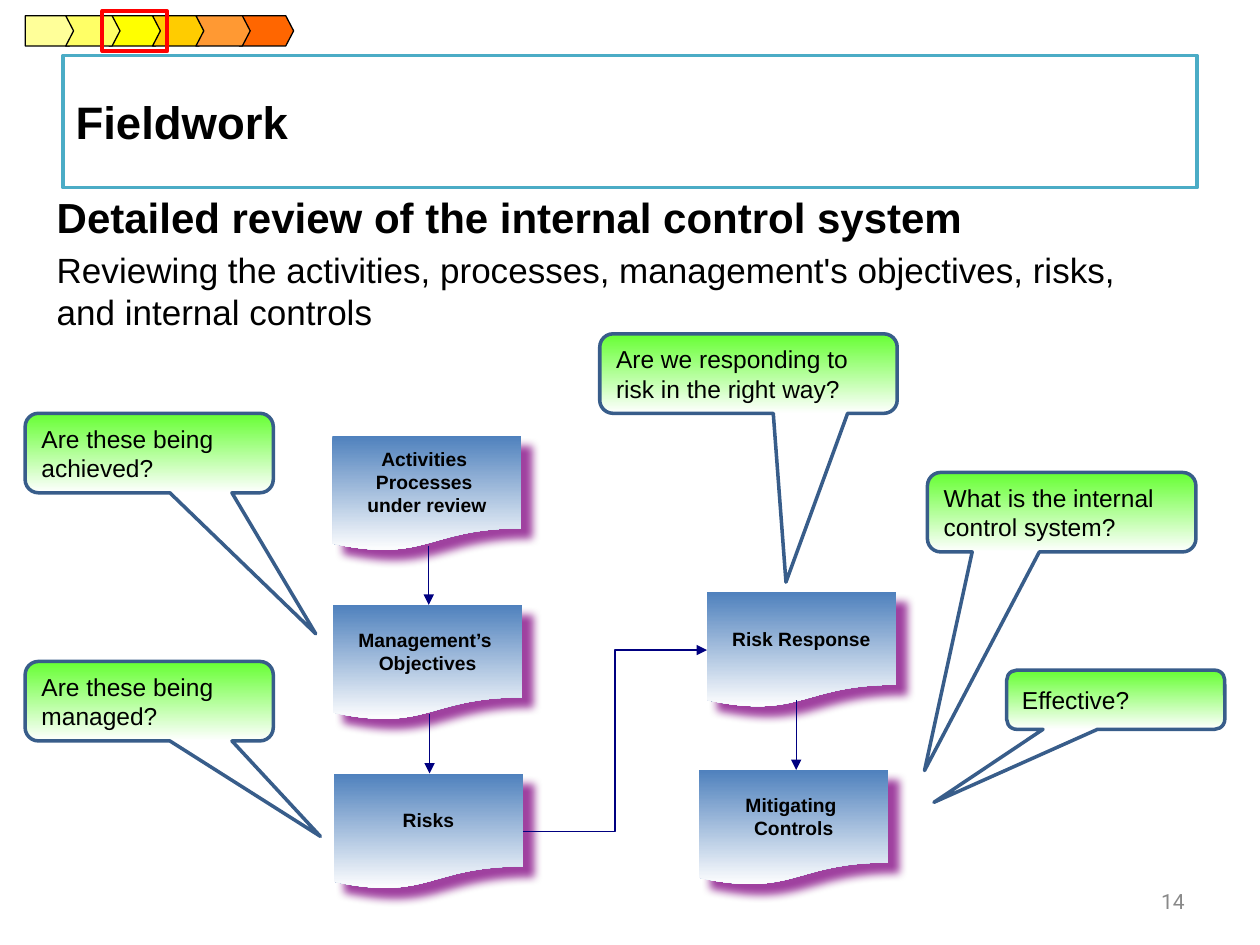
from dataclasses import dataclass

import pptx
import pptx.dml.color
import pptx.enum.shapes
import pptx.enum.text
import pptx.oxml
import pptx.oxml.ns
import pptx.util
from pptx.util import Pt

SHAPE = pptx.enum.shapes.MSO_SHAPE
CONNECTOR = pptx.enum.shapes.MSO_CONNECTOR
ALIGN = pptx.enum.text.PP_ALIGN
ANCHOR = pptx.enum.text.MSO_ANCHOR
NO_AUTOFIT = pptx.enum.text.MSO_AUTO_SIZE.NONE


@dataclass(frozen=True)
class Theme:
    font: str = "Arial"
    number_font: str = "Roboto"
    text: str = "000000"
    number: str = "898989"
    white: str = "FFFFFF"
    title_line: str = "4BACC6"
    document: str = "4F81BD"
    document_shadow: str = "800080"
    callout: str = "66FF33"
    callout_line: str = "385D8A"
    arrow: str = "000080"
    marker: str = "FF0000"
    title_size: float = 26
    heading_size: float = 24
    body_size: float = 20
    callout_size: float = 14
    number_size: float = 12
    document_size: float = 11


THEME = Theme()

# Strip steps from back to front: position, colour
STEPS = [(0, "FFFF99"), (2, "FFFF00"), (3, "FFCC00"),
         (5, "FF6600"), (4, "FF9933"), (1, "FFFF66")]

# Documents: text, left, top
LEFT_COLUMN = ["Activities \vProcesses \vunder review",
               "Management’s \vObjectives", "Risks"]
RIGHT_COLUMN = [("Risk Response", 404, 338.4), ("Mitigating \vControls", 399.6, 440)]

# Arrows: kind, start, end
ARROWS = [
    (CONNECTOR.STRAIGHT, (245, 311.8), (245, 345.6)),
    (CONNECTOR.STRAIGHT, (245.5, 408.2), (245.5, 442)),
    (CONNECTOR.ELBOW, (298.8, 475.2), (404, 371.5)),
    (CONNECTOR.STRAIGHT, (455, 400.3), (455, 440)),
]

# Callouts: text, box, pointer position relative to the box
CALLOUTS = [
    ("What is the internal control system?", (530, 270, 153.4, 45.4), (-0.511, 3.252)),
    ("Effective?", (575.3, 383, 124.6, 33.8), (-0.834, 1.735)),
    ("Are these being managed?", (14.4, 378, 141.8, 45.4), (0.69, 1.701)),
    ("Are these being achieved?", (14.4, 236.2, 141.8, 45.4), (0.671, 2.274)),
    ("Are we responding to risk in the right way?", (342.7, 190.8, 170, 45.4), (0.126, 2.624)),
]


def rgb(value):
    return pptx.dml.color.RGBColor.from_string(value)


def set_attributes(target, values):
    for name, value in values.items():
        setattr(target, name, value)


def write(paragraph, text, size, bold=False, color=THEME.text, font=THEME.font, **layout):
    paragraph.text = text
    set_attributes(paragraph, layout)
    for run in paragraph.runs:
        set_attributes(run.font, {"name": font, "size": Pt(size), "bold": bold})
        run.font.color.rgb = rgb(color)


def set_line(line, color, width):
    line.color.rgb = rgb(color)
    line.width = Pt(width)


def place(shape, left, top, width, height):
    set_attributes(shape, {"left": Pt(left), "top": Pt(top),
                           "width": Pt(width), "height": Pt(height)})


def add_shape(slide, kind, box, adjustments=()):
    shape = slide.shapes.add_shape(kind, *map(Pt, box))
    shape.shadow.inherit = False
    for index, value in enumerate(adjustments):
        shape.adjustments[index] = value
    return shape


def fill_downward(shape, color):
    """Fade from the colour at the top to white at the bottom."""
    shape.fill.gradient()
    shape.fill.gradient_angle = 270
    for stop, stop_color in zip(shape.fill.gradient_stops, (color, THEME.white)):
        stop.color.rgb = rgb(stop_color)


def add_title(slide, text):
    title = slide.shapes.title
    place(title, 36, 31.7, 648, 75.6)
    title.fill.solid()
    title.fill.fore_color.rgb = rgb(THEME.white)
    set_line(title.line, THEME.title_line, 2)
    set_attributes(title.text_frame, {"auto_size": NO_AUTOFIT, "vertical_anchor": ANCHOR.MIDDLE})
    write(title.text_frame.paragraphs[0], text, THEME.title_size, True, alignment=ALIGN.LEFT)


def add_body(slide, heading, detail):
    body = slide.placeholders[1]
    place(body, 25.2, 105.8, 646.6, 102.2)
    frame = body.text_frame
    frame.auto_size = NO_AUTOFIT
    write(frame.paragraphs[0], heading, THEME.heading_size, True)
    write(frame.add_paragraph(), detail, THEME.body_size)
    for paragraph in frame.paragraphs:
        properties = paragraph._p.get_or_add_pPr()
        properties.set("marL", "0")
        properties.set("indent", "0")
        properties.append(pptx.oxml.parse_xml(
            f'<a:buNone {pptx.oxml.ns.nsdecls("a")}/>'))


def add_page_number(slide, text):
    box = slide.shapes.add_textbox(Pt(516), Pt(500.4), Pt(168), Pt(28.8))
    set_attributes(box.text_frame, {"word_wrap": True, "vertical_anchor": ANCHOR.MIDDLE})
    write(box.text_frame.paragraphs[0], text, THEME.number_size, color=THEME.number,
          font=THEME.number_font, alignment=ALIGN.RIGHT)


def add_document(slide, text, left, top):
    shape = add_shape(slide, SHAPE.FLOWCHART_DOCUMENT, (left, top, 108, 66))
    fill_downward(shape, THEME.document)
    shape.line.fill.background()
    effects = shape._element.spPr.find(pptx.oxml.ns.qn("a:effectLst"))
    effects.append(pptx.oxml.parse_xml(
        f'<a:outerShdw {pptx.oxml.ns.nsdecls("a")} blurRad="{Pt(5)}" dist="{Pt(8.5)}" '
        f'dir="2700000" algn="tl" rotWithShape="0"><a:srgbClr val="{THEME.document_shadow}">'
        '<a:alpha val="75000"/></a:srgbClr></a:outerShdw>'))
    set_attributes(shape.text_frame, {"word_wrap": False, "vertical_anchor": ANCHOR.MIDDLE})
    write(shape.text_frame.paragraphs[0], text, THEME.document_size, True,
          alignment=ALIGN.CENTER)


def add_arrow(slide, kind, start, end):
    arrow = slide.shapes.add_connector(kind, *map(Pt, start + end))
    set_line(arrow.line, THEME.arrow, 0.75)
    namespace = pptx.oxml.ns.nsdecls("a")
    arrow.line._get_or_add_ln().append(
        pptx.oxml.parse_xml(f'<a:tailEnd {namespace} type="triangle"/>'))
    arrow._element.spPr.append(pptx.oxml.parse_xml(f'<a:effectLst {namespace}/>'))


def add_callout(slide, text, box, pointer):
    shape = add_shape(slide, SHAPE.ROUNDED_RECTANGULAR_CALLOUT, box, (*pointer, 0.167))
    fill_downward(shape, THEME.callout)
    set_line(shape.line, THEME.callout_line, 2)
    set_attributes(shape.text_frame, {"word_wrap": True, "vertical_anchor": ANCHOR.MIDDLE})
    write(shape.text_frame.paragraphs[0], text, THEME.callout_size,
          alignment=ALIGN.LEFT, space_before=Pt(7))


def add_step_strip(slide):
    for position, color in STEPS:
        if position == 0:
            step = add_shape(slide, SHAPE.PENTAGON, (14.4, 9, 29.5, 17.3), (0.25,))
        else:
            left = 37.6 + 24.8 * (position - 1)
            step = add_shape(slide, SHAPE.CHEVRON, (left, 9, 31, 17.3), (0.26,))
        step.fill.solid()
        step.fill.fore_color.rgb = rgb(color)
        set_line(step.line, THEME.text, 0.75)
    marker = add_shape(slide, SHAPE.RECTANGLE, (58.5, 6.3, 37, 23))
    marker.fill.background()
    set_line(marker.line, THEME.marker, 2.25)


def main():
    presentation = pptx.Presentation()
    set_attributes(presentation, {"slide_width": Pt(720), "slide_height": Pt(540)})
    slide = presentation.slides.add_slide(presentation.slide_layouts[1])

    # Heading texts
    add_title(slide, "Fieldwork")
    add_body(slide, "Detailed review of the internal control system",
             "Reviewing the activities, processes, management's objectives, risks, "
             "and internal controls")
    add_page_number(slide, "14")

    # Flow of documents
    for row, text in enumerate(LEFT_COLUMN):
        add_document(slide, text, 190 + 0.4 * row, 249 + 96.6 * row)
    for document in RIGHT_COLUMN:
        add_document(slide, *document)
    for arrow in ARROWS:
        add_arrow(slide, *arrow)

    # Questions and progress strip
    for callout in CALLOUTS:
        add_callout(slide, *callout)
    add_step_strip(slide)

    presentation.save("out.pptx")


if __name__ == "__main__":
    main()
